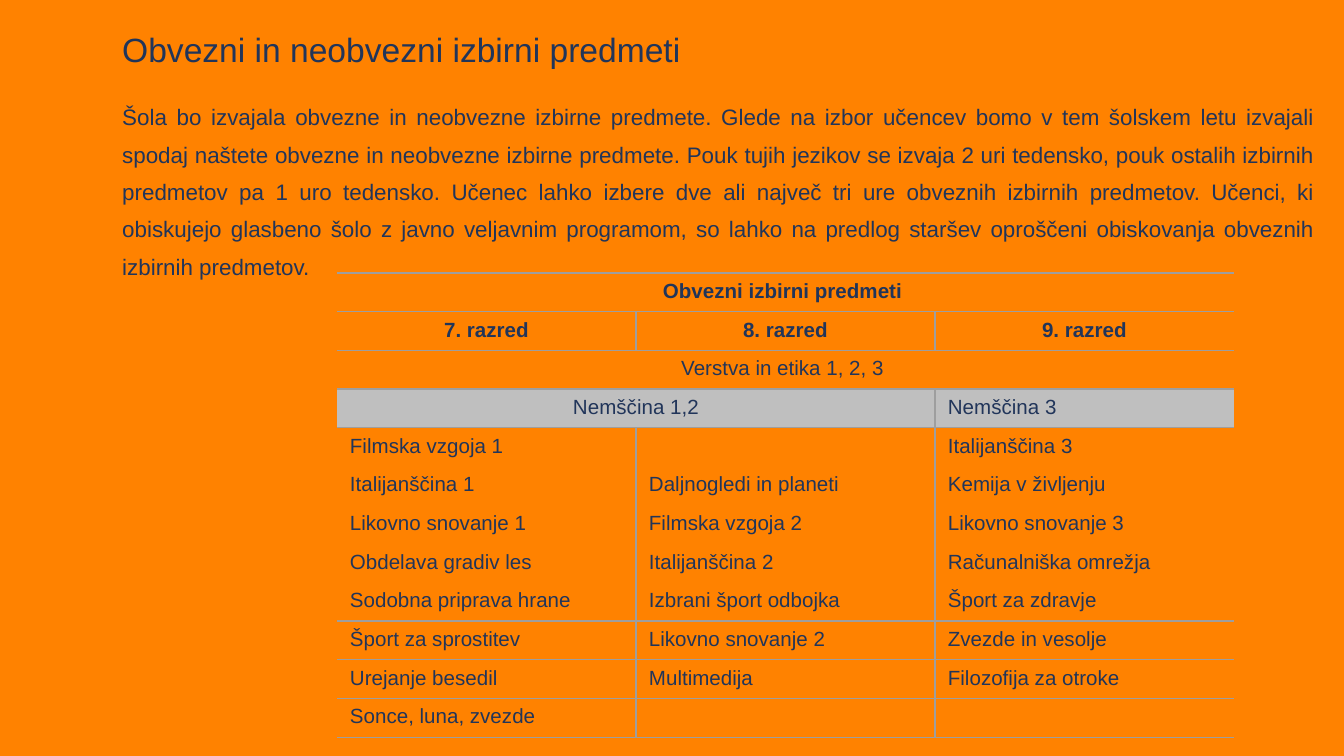
from dataclasses import dataclass

from lxml.etree import SubElement
from pptx import Presentation
from pptx.dml.color import RGBColor
from pptx.enum.text import PP_ALIGN
from pptx.oxml.ns import qn
from pptx.util import Pt

EMU_PER_PX = 9144000 / 1344
COLORS = {"background": "FF8200", "text": "21355A", "band": "BFBFBF", "rule": "9E9E9E"}
COLUMN_COUNT = 3
COLUMN_WIDTH, ROW_HEIGHT = 299, 38
CELL_MARGIN_X, CELL_MARGIN_Y = 13, 7
RULE_WIDTH = Pt(0.75)


@dataclass(frozen=True)
class TextBlock:
    text: str
    left: int
    top: int
    width: int
    height: int
    size: int
    inset_top: int
    align: PP_ALIGN = PP_ALIGN.LEFT
    line_spacing: int | None = None
    space_after: int = 0


@dataclass(frozen=True)
class TableRow:
    texts: tuple[str, ...]
    spans: tuple[int, ...] = (1, 1, 1)
    centred: int = 0  # number of leading cells that are centred
    bold: bool = False
    fill: str | None = None
    rule_above: bool = True


BLOCKS = [
    TextBlock("Obvezni in neobvezni izbirni predmeti", 109, 19, 1247, 67, size=18, inset_top=10),
    TextBlock(
        "Šola bo izvajala obvezne in neobvezne izbirne predmete. Glede na izbor učencev bomo "
        "v tem šolskem letu izvajali spodaj naštete obvezne in neobvezne izbirne predmete. "
        "Pouk tujih jezikov se izvaja 2 uri tedensko, pouk ostalih izbirnih predmetov pa 1 uro "
        "tedensko. Učenec lahko izbere dve ali največ tri ure obveznih izbirnih predmetov. "
        "Učenci, ki obiskujejo glasbeno šolo z javno veljavnim programom, so lahko na predlog "
        "staršev oproščeni obiskovanja obveznih izbirnih predmetov. ",
        109, 86, 1220, 202, size=12, inset_top=7,
        align=PP_ALIGN.JUSTIFY, line_spacing=20, space_after=10,
    ),
]

ROWS = [
    TableRow(("Obvezni izbirni predmeti ",), (3,), centred=1, bold=True),
    TableRow(("7. razred", "8. razred", "9. razred"), centred=3, bold=True),
    TableRow(("Verstva in etika 1, 2, 3 ",), (3,), centred=1),
    TableRow(("Nemščina 1,2", "Nemščina 3"), (2, 1), centred=1, fill="band"),
    TableRow(("Filmska vzgoja 1", "", "Italijanščina 3")),
    TableRow(("Italijanščina 1", "Daljnogledi in planeti", "Kemija v življenju"), rule_above=False),
    TableRow(("Likovno snovanje 1", "Filmska vzgoja 2", "Likovno snovanje 3"), rule_above=False),
    TableRow(("Obdelava gradiv les", "Italijanščina 2", "Računalniška omrežja"), rule_above=False),
    TableRow(("Sodobna priprava hrane", "Izbrani šport odbojka", "Šport za zdravje"), rule_above=False),
    TableRow(("Šport za sprostitev", "Likovno snovanje 2", "Zvezde in vesolje")),
    TableRow(("Urejanje besedil", "Multimedija", "Filozofija za otroke")),
    TableRow(("Sonce, luna, zvezde", "", "")),
]


def px(length: int) -> int:
    return round(length * EMU_PER_PX)


def color(name: str) -> RGBColor:
    return RGBColor.from_string(COLORS[name])


def write_text(frame, text: str, *, size: int, bold: bool = False,
               align: PP_ALIGN = PP_ALIGN.LEFT, line_spacing: int | None = None,
               space_after: int = 0) -> None:
    para = frame.paragraphs[0]
    para.alignment = align
    para.space_after = Pt(space_after)
    if line_spacing:
        para.line_spacing = Pt(line_spacing)
    target = para
    if text:
        target = para.add_run()
        target.text = text
    font = target.font
    font.name, font.size, font.bold = "Arial", Pt(size), bold
    font.color.rgb = color("text")


def add_block(page, block: TextBlock) -> None:
    box = page.shapes.add_textbox(px(block.left), px(block.top), px(block.width), px(block.height))
    frame = box.text_frame
    frame.word_wrap = True
    frame.margin_top = px(block.inset_top)
    write_text(frame, block.text, size=block.size, align=block.align,
               line_spacing=block.line_spacing, space_after=block.space_after)


def set_borders(cell, left: bool, right: bool, top: bool, bottom: bool) -> None:
    properties = cell._tc.get_or_add_tcPr()
    sides = {"a:lnL": left, "a:lnR": right, "a:lnT": top, "a:lnB": bottom}
    for position, (tag, visible) in enumerate(sides.items()):
        line = SubElement(properties, qn(tag), w=str(RULE_WIDTH))
        if visible:
            fill = SubElement(line, qn("a:solidFill"))
            SubElement(fill, qn("a:srgbClr"), val=COLORS["rule"])
        else:
            SubElement(line, qn("a:noFill"))
        properties.insert(position, line)  # borders precede the fill


def fill_row(table, index: int, row: TableRow) -> None:
    rule_below = index + 1 == len(ROWS) or ROWS[index + 1].rule_above
    start = 0
    for order, (text, span) in enumerate(zip(row.texts, row.spans)):
        end = start + span
        cell = table.cell(index, start)
        if span > 1:
            cell.merge(table.cell(index, end - 1))
        cell.margin_left = cell.margin_right = px(CELL_MARGIN_X)
        cell.margin_top = cell.margin_bottom = px(CELL_MARGIN_Y)
        align = PP_ALIGN.CENTER if order < row.centred else PP_ALIGN.LEFT
        write_text(cell.text_frame, text, size=11, bold=row.bold, align=align)
        # Only inner vertical rules show; merged parts share the fill
        for column in range(start, end):
            part = table.cell(index, column)
            if row.fill:
                part.fill.solid()
                part.fill.fore_color.rgb = color(row.fill)
            else:
                part.fill.background()
            set_borders(part, left=column == start > 0,
                        right=column + 1 == end < COLUMN_COUNT,
                        top=row.rule_above, bottom=rule_below)
        start = end


def add_subject_table(page, left: int, top: int) -> None:
    frame = page.shapes.add_table(len(ROWS), COLUMN_COUNT, px(left), px(top),
                                  px(COLUMN_COUNT * COLUMN_WIDTH), px(len(ROWS) * ROW_HEIGHT))
    table = frame.table
    table.first_row = table.horz_banding = False
    for column in table.columns:
        column.width = px(COLUMN_WIDTH)
    for index, row in enumerate(ROWS):
        table.rows[index].height = px(ROW_HEIGHT)
        fill_row(table, index, row)


def main() -> None:
    deck = Presentation()
    deck.slide_width, deck.slide_height = px(1344), px(756)
    page = deck.slides.add_slide(deck.slide_layouts[6])
    page.background.fill.solid()
    page.background.fill.fore_color.rgb = color("background")

    # Title and introduction
    for block in BLOCKS:
        add_block(page, block)

    # Elective subjects by grade
    add_subject_table(page, left=337, top=273)
    deck.save("out.pptx")


if __name__ == "__main__":
    main()
